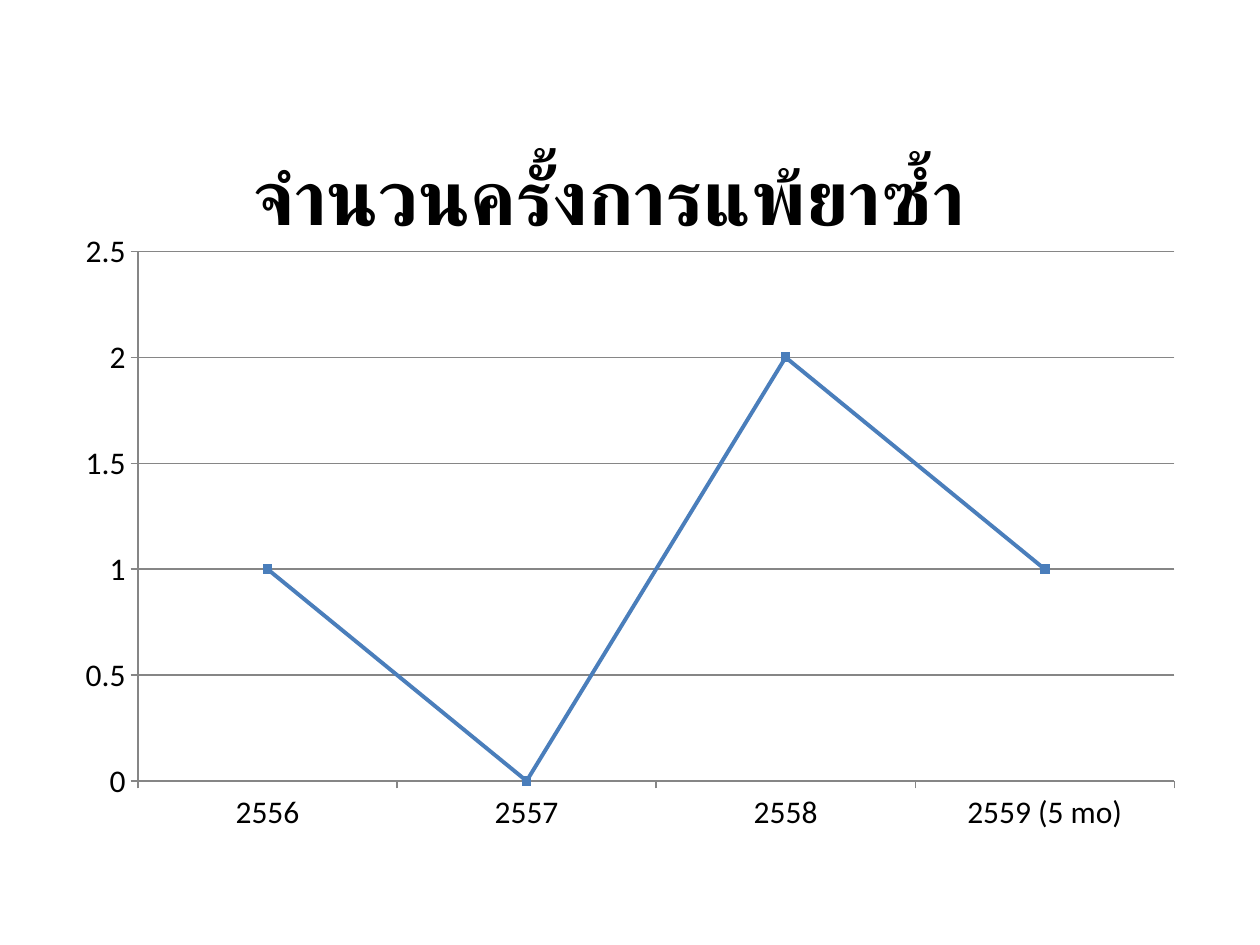
"""Build a slide with a line chart of repeated drug allergy counts per year."""
import pptx
import pptx.chart.data
import pptx.dml.color
import pptx.enum.chart
import pptx.enum.text
import pptx.util

BLACK = pptx.dml.color.RGBColor(0x00, 0x00, 0x00)
BLUE = pptx.dml.color.RGBColor(0x4A, 0x7E, 0xBB)
GRAY = pptx.dml.color.RGBColor(0x86, 0x86, 0x86)
EMU_PER_PX = 914400 // 126


def px(length):
    return pptx.util.Emu(length * EMU_PER_PX)


class SlideBuilder:
    title_font = "Lato"
    chart_font = "Calibri"

    def __init__(self, slide):
        self.slide = slide

    def title(self, text, left, top, width, height):
        shape = self.slide.shapes.add_textbox(px(left), px(top), px(width), px(height))
        frame = shape.text_frame
        frame.word_wrap = True
        frame.vertical_anchor = pptx.enum.text.MSO_ANCHOR.MIDDLE
        paragraph = frame.paragraphs[0]
        paragraph.alignment = pptx.enum.text.PP_ALIGN.CENTER
        run = paragraph.add_run()
        run.text = text
        run.font.name = self.title_font
        run.font.size = pptx.util.Pt(44)
        run.font.bold = True
        run.font.color.rgb = BLACK

    def line_chart(self, name, points, left, top, width, height):
        data = pptx.chart.data.CategoryChartData()
        data.categories = list(points)
        data.add_series(name, list(points.values()))
        chart = self.slide.shapes.add_chart(
            pptx.enum.chart.XL_CHART_TYPE.LINE_MARKERS,
            px(left), px(top), px(width), px(height), data).chart
        chart.has_title = False
        chart.has_legend = False
        chart.font.name = self.chart_font
        chart.font.size = pptx.util.Pt(18)
        chart.font.color.rgb = BLACK
        chart.plots[0].vary_by_categories = False

        series = chart.plots[0].series[0]
        series.smooth = False
        self.line(series.format.line, BLUE, 2.25)
        series.marker.style = pptx.enum.chart.XL_MARKER_STYLE.SQUARE
        series.marker.size = 5
        series.marker.format.fill.solid()
        series.marker.format.fill.fore_color.rgb = BLUE
        self.line(series.marker.format.line, BLUE, 0.75)

        for axis in (chart.category_axis, chart.value_axis):
            axis.major_tick_mark = pptx.enum.chart.XL_TICK_MARK.OUTSIDE
            axis.minor_tick_mark = pptx.enum.chart.XL_TICK_MARK.NONE
            self.line(axis.format.line, GRAY, 0.75)
        value_axis = chart.value_axis
        value_axis.minimum_scale = 0
        value_axis.maximum_scale = 2.5
        value_axis.major_unit = 0.5
        value_axis.has_major_gridlines = True
        self.line(value_axis.major_gridlines.format.line, GRAY, 0.75)

    def line(self, line, color, width):
        line.color.rgb = color
        line.width = pptx.util.Pt(width)


def main():
    presentation = pptx.Presentation()
    presentation.slide_width = pptx.util.Inches(10)
    presentation.slide_height = pptx.util.Inches(7.5)
    builder = SlideBuilder(presentation.slides.add_slide(presentation.slide_layouts[6]))
    builder.line_chart(
        "Series 1", {"2556": 1, "2557": 0, "2558": 2, "2559 (5 mo)": 1},
        63, 220, 1134, 624)
    builder.title("จำนวนครั้งการแพ้ยาซ้ำ", 42, 116, 1134, 158)
    presentation.save("out.pptx")


if __name__ == "__main__":
    main()
